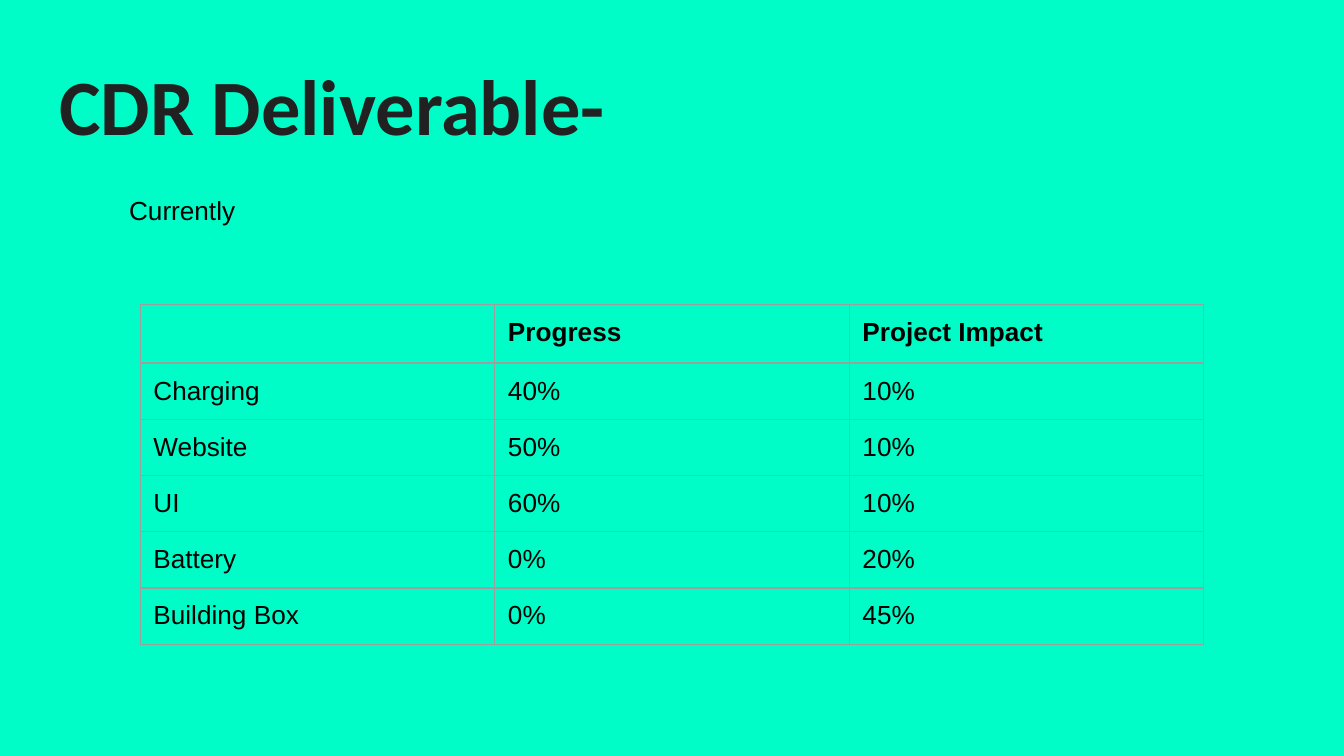
"""Build the CDR deliverable slide with its progress table."""
from dataclasses import dataclass

from lxml.etree import SubElement
from pptx import Presentation
from pptx.dml.color import RGBColor
from pptx.enum.text import MSO_ANCHOR, MSO_AUTO_SIZE, PP_ALIGN
from pptx.oxml.ns import qn
from pptx.slide import Slide
from pptx.util import Cm, Pt

PAD = Cm(0.25)
BLACK = "000000"
GREY = "9E9E9E"


@dataclass
class Box:
    left: float
    top: float
    width: float
    height: float

    def place(self) -> tuple:
        return Cm(self.left), Cm(self.top), Cm(self.width), Cm(self.height)


@dataclass
class Task:
    name: str
    done: str
    impact: str
    bold: bool = False


TASKS = [
    Task("", "Progress", "Project Impact", True),
    Task("Charging", "40%", "10%"),
    Task("Website", "50%", "10%"),
    Task("UI", "60%", "10%"),
    Task("Battery", "0%", "20%"),
    Task("Building Box", "0%", "45%"),
]


def color(code: str) -> RGBColor:
    return RGBColor.from_string(code)


def write(frame, text: str, size: int = 14, face: str = "Arial",
          code: str = BLACK, bold: bool = False) -> None:
    frame.text = text
    frame.word_wrap = True
    para = frame.paragraphs[0]
    para.alignment = PP_ALIGN.LEFT
    for run in para.runs:
        font = run.font
        font.size, font.name, font.bold = Pt(size), face, bold
        font.color.rgb = color(code)
    if not text:
        SubElement(para._p, qn("a:endParaRPr"), sz=str(size * 100))


def pad(item) -> None:
    item.margin_left = item.margin_right = PAD
    item.margin_top = item.margin_bottom = PAD
    item.vertical_anchor = MSO_ANCHOR.TOP


def border(cell) -> None:
    props = cell._tc.get_or_add_tcPr()
    for side in ("lnL", "lnR", "lnT", "lnB"):
        line = SubElement(props, qn(f"a:{side}"), w=str(Pt(0.75)))
        fill = SubElement(line, qn("a:solidFill"))
        SubElement(fill, qn("a:srgbClr"), val=GREY)


def draw_title(slide: Slide, box: Box) -> None:
    title = slide.shapes.title
    title.left, title.top, title.width, title.height = box.place()
    frame = title.text_frame
    pad(frame)
    write(frame, "CDR Deliverable-", 42, "Calibri", "212121", True)
    frame.auto_size = MSO_AUTO_SIZE.NONE


def draw_label(slide: Slide, box: Box) -> None:
    frame = slide.shapes.add_textbox(*box.place()).text_frame
    pad(frame)
    write(frame, "Currently")


def draw_table(slide: Slide, box: Box) -> None:
    table = slide.shapes.add_table(len(TASKS), 3, *box.place()).table
    table.first_row = table.horz_banding = False
    for row, task in enumerate(TASKS):
        for col, text in enumerate((task.name, task.done, task.impact)):
            cell = table.cell(row, col)
            pad(cell)
            write(cell.text_frame, text, bold=task.bold)
            border(cell)
            cell.fill.background()


def main() -> None:
    deck = Presentation()
    deck.slide_width, deck.slide_height = Cm(25.4), Cm(14.29)
    slide = deck.slides.add_slide(deck.slide_layouts[5])
    fill = slide.background.fill
    fill.solid()
    fill.fore_color.rgb = color("00FDC8")
    draw_title(slide, Box(0.87, 0.82, 23.67, 2.24))
    draw_table(slide, Box(2.65, 5.76, 20.1, 6.38))
    draw_label(slide, Box(2.19, 3.43, 8.31, 1.09))
    deck.save("out.pptx")


if __name__ == "__main__":
    main()
